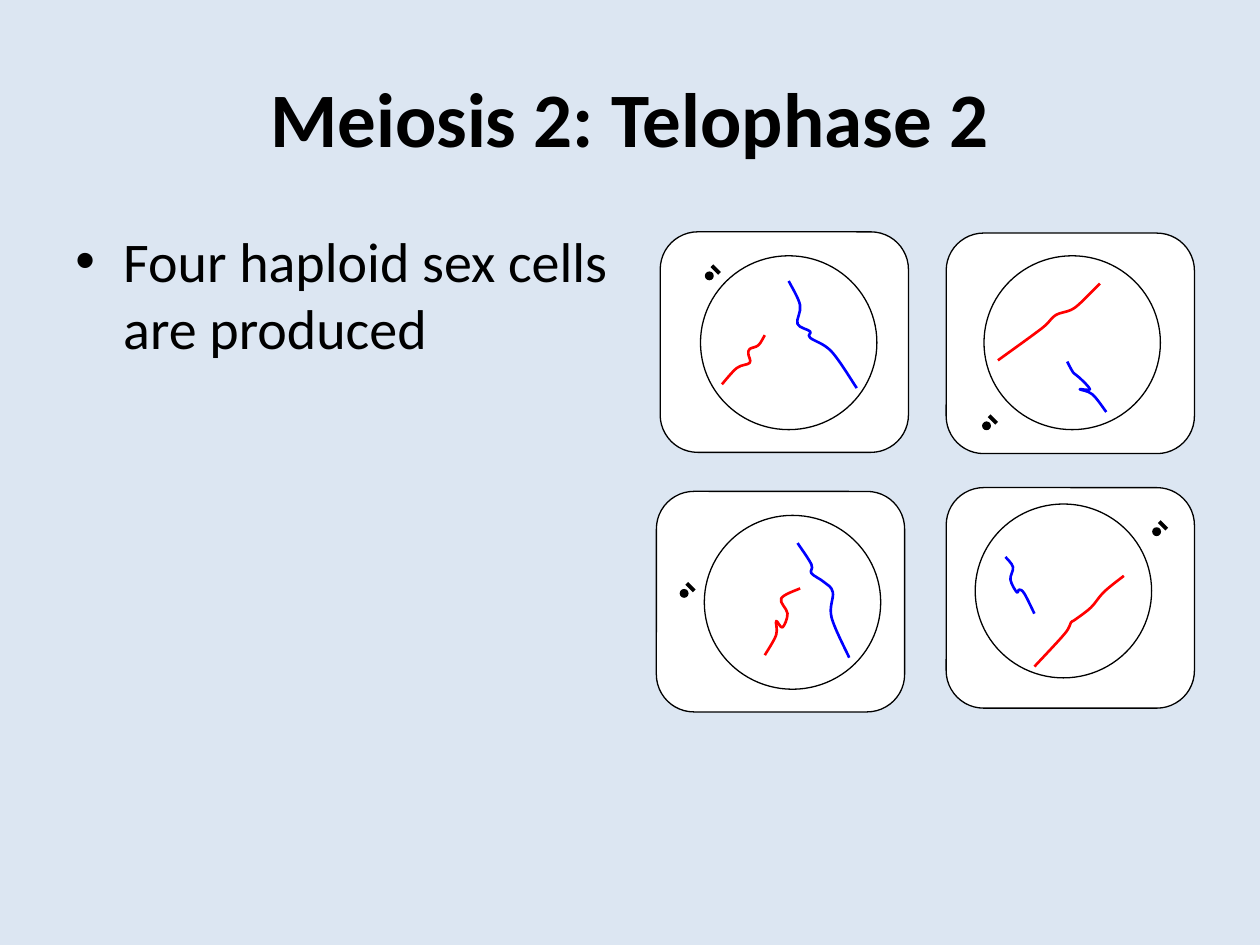
import pptx
import pptx.util
import pptx.dml.color
import pptx.enum.shapes
import pptx.enum.text
import pptx.oxml.ns
import lxml.etree

COLORS = {"background": "DCE6F2", "cell": "FFFFFF", "ink": "000000",
          "red": "FF0000", "blue": "0000FF"}
FONT = "Calibri"

presentation = pptx.Presentation()
presentation.slide_width = pptx.util.Inches(10)
presentation.slide_height = pptx.util.Inches(7.5)
# Every position is counted on a grid of 1000 columns by 750 rows
UNIT = presentation.slide_width // 1000
SHAPES = pptx.enum.shapes.MSO_SHAPE

slide = presentation.slides.add_slide(presentation.slide_layouts[6])


def rgb(name):
    return pptx.dml.color.RGBColor.from_string(COLORS[name])


def add_body(group, kind, box, fill):
    shape = group.shapes.add_shape(kind, *[length * UNIT for length in box])
    shape.shadow.inherit = False
    shape.fill.solid()
    shape.fill.fore_color.rgb = rgb(fill)
    shape.line.color.rgb = rgb("ink")
    shape.line.width = pptx.util.Pt(0.75)
    return shape


# Background
slide.background.fill.solid()
slide.background.fill.fore_color.rgb = rgb("background")

# Title and bullet text: box, wording, size, bold, alignment, anchor
ALIGN = pptx.enum.text.PP_ALIGN
ANCHOR = pptx.enum.text.MSO_ANCHOR
texts = [
    ((50, 30, 900, 125), "Meiosis 2: Telophase 2", 44, True, ALIGN.CENTER, ANCHOR.MIDDLE),
    ((50, 175, 453, 495), "Four haploid sex cells are produced", 32, False, ALIGN.LEFT, ANCHOR.TOP),
]
for box, wording, size, bold, alignment, anchor in texts:
    frame = slide.shapes.add_textbox(*[length * UNIT for length in box]).text_frame
    frame.word_wrap = True
    frame.vertical_anchor = anchor
    paragraph = frame.paragraphs[0]
    paragraph.alignment = alignment
    run = paragraph.add_run()
    run.text = wording
    run.font.name = FONT
    run.font.size = pptx.util.Pt(size)
    run.font.bold = bold
    run.font.color.rgb = rgb("ink")

# Bullet with hanging indent on the last text
properties = paragraph._p.get_or_add_pPr()
properties.set("marL", str(38 * UNIT))
properties.set("indent", str(-38 * UNIT))
lxml.etree.SubElement(properties, pptx.oxml.ns.qn("a:buFont")).set("typeface", "Arial")
lxml.etree.SubElement(properties, pptx.oxml.ns.qn("a:buChar")).set("char", "•")

# Cells: corners of cell, nucleus and centriole, then the points that each
# chromosome passes through
CELL_SIZE = (197, 175)
NUCLEUS_SIZE = (140, 138)
cells = [
    {"cell": (751, 387), "nucleus": (774, 400), "centriole": (920, 414),
     "red": [(892, 457), (876, 470), (866, 482), (853, 492), (850, 494), (845, 503), (821, 529)],
     "blue": [(798, 442), (804, 450), (802, 460), (807, 470), (809, 468), (813, 471), (821, 487)]},
    {"cell": (751, 185), "nucleus": (781, 203), "centriole": (785, 330),
     "red": [(873, 225), (858, 240), (850, 246), (838, 250), (830, 258), (821, 265), (792, 286)],
     "blue": [(847, 287), (852, 296), (857, 300), (865, 309), (857, 309), (867, 313), (878, 327)]},
    {"cell": (524, 184), "nucleus": (556, 203), "centriole": (565, 211),
     "blue": [(626, 223), (635, 242), (633, 257), (643, 263), (643, 268), (660, 279), (680, 308)],
     "red": [(607, 266), (602, 274), (595, 277), (594, 281), (595, 288), (585, 292), (573, 305)]},
    {"cell": (521, 390), "nucleus": (559, 409), "centriole": (545, 463),
     "blue": [(633, 431), (644, 448), (644, 455), (654, 462), (661, 470), (660, 490), (674, 522)],
     "red": [(635, 467), (620, 475), (625, 487), (621, 498), (616, 493), (616, 504), (607, 520)]},
]

for cell in cells:
    group = slide.shapes.add_group_shape()
    membrane = add_body(group, SHAPES.ROUNDED_RECTANGLE, cell["cell"] + CELL_SIZE, "cell")
    membrane.adjustments[0] = 0.17
    add_body(group, SHAPES.OVAL, cell["nucleus"] + NUCLEUS_SIZE, "cell")

    # Centriole pair: a short rod and a dot
    x, y = cell["centriole"]
    rod = group.shapes.add_connector(
        pptx.enum.shapes.MSO_CONNECTOR.STRAIGHT,
        x * UNIT, y * UNIT, (x + 6) * UNIT, (y + 6) * UNIT)
    rod.line.color.rgb = rgb("ink")
    rod.line.width = pptx.util.Pt(2.25)
    lxml.etree.SubElement(rod.element.spPr, pptx.oxml.ns.qn("a:effectLst"))
    add_body(group, SHAPES.OVAL, (x - 5, y + 5, 6, 6), "ink")

    # Chromosomes: a smooth curve whose handles follow the neighbouring points
    for color in ("red", "blue"):
        points = cell[color]
        padded = [points[0], *points, points[-1]]
        route = []
        for before, start, end, after in zip(padded, padded[1:], padded[2:], padded[3:]):
            route.append([s + (e - b) / 6 for b, s, e in zip(before, start, end)])
            route.append([e - (a - s) / 6 for s, e, a in zip(start, end, after)])
            route.append(end)
        # Tenths of a unit keep the handles precise
        tenths = [(round(x * 10), round(y * 10)) for x, y in [points[0], *route]]
        builder = group.shapes.build_freeform(*tenths[0], scale=UNIT / 10)
        builder.add_line_segments(tenths[1:], close=False)
        chromosome = builder.convert_to_shape()

        # Every three line segments become one Bézier curve
        segments = chromosome.element.xpath(".//a:lnTo")
        outline = segments[0].getparent()
        for first in range(0, len(segments), 3):
            curve = lxml.etree.SubElement(outline, pptx.oxml.ns.qn("a:cubicBezTo"))
            for segment in segments[first:first + 3]:
                curve.append(segment[0])
                outline.remove(segment)
        chromosome.shadow.inherit = False
        chromosome.fill.background()
        chromosome.line.color.rgb = rgb(color)
        chromosome.line.width = pptx.util.Pt(1.5)

presentation.save("out.pptx")
